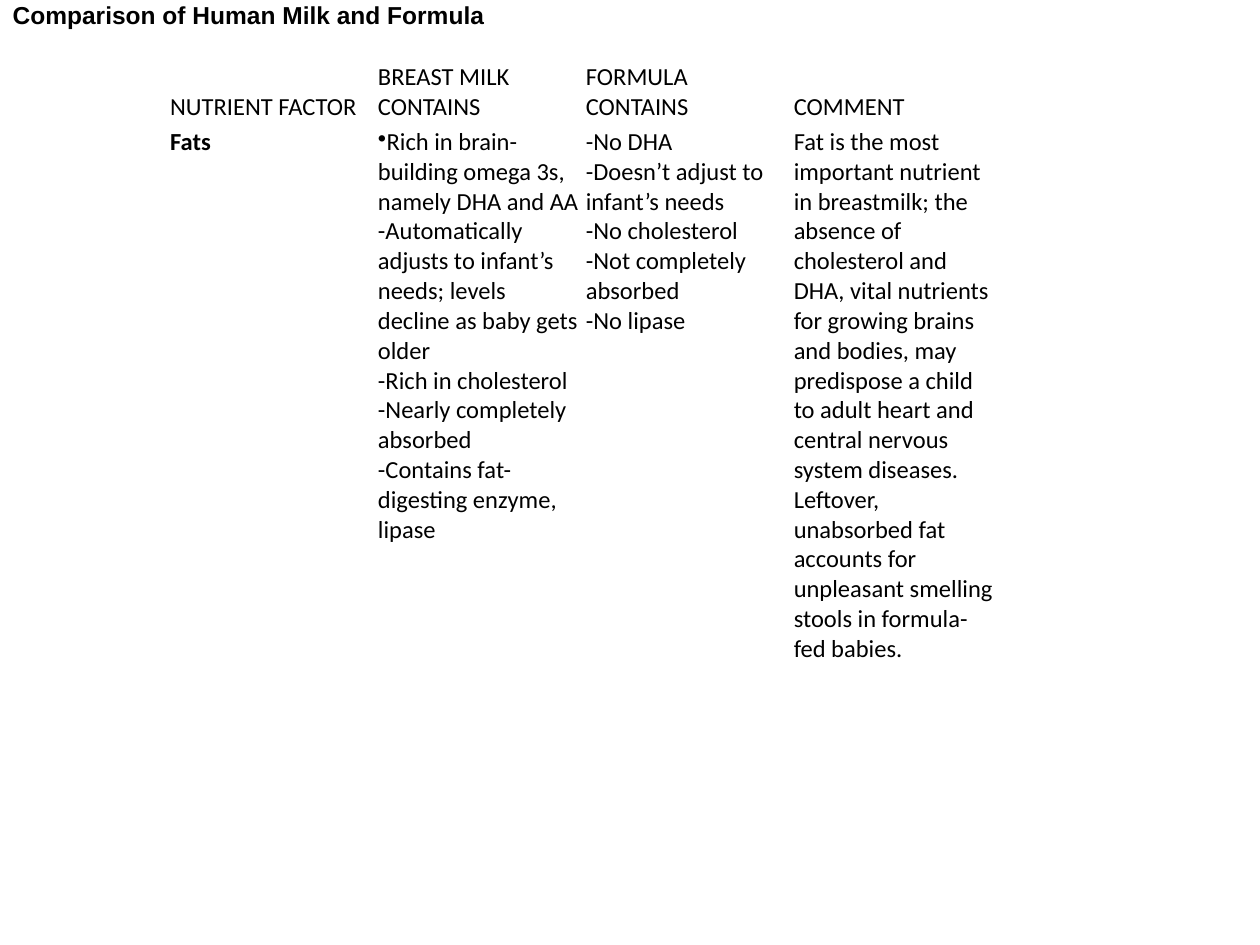
from lxml.etree import SubElement
from pptx import Presentation
from pptx.dml.color import RGBColor
from pptx.enum.text import MSO_ANCHOR, MSO_AUTO_SIZE, PP_ALIGN
from pptx.oxml.ns import qn
from pptx.util import Inches, Pt

BLACK = "000000"
HEADINGS = ["NUTRIENT FACTOR", "BREAST MILK CONTAINS", "FORMULA CONTAINS", "COMMENT"]
FATS = [
    "Fats",
    "Rich in brain-building omega 3s, namely DHA and AA\n"
    "-Automatically adjusts to infant’s needs; levels decline as baby gets older\n"
    "-Rich in cholesterol\n"
    "-Nearly completely absorbed\n"
    "-Contains fat-digesting enzyme, lipase",
    "-No DHA\n"
    "-Doesn’t adjust to infant’s needs\n"
    "-No cholesterol\n"
    "-Not completely absorbed\n"
    "-No lipase",
    "Fat is the most important nutrient in breastmilk; the absence of cholesterol "
    "and DHA, vital nutrients for growing brains and bodies, may predispose a child "
    "to adult heart and central nervous system diseases. Leftover, unabsorbed fat "
    "accounts for unpleasant smelling stools in formula-fed babies.",
]


def color(hex_value):
    return RGBColor.from_string(hex_value)


def write(paragraph, text, font_name, bold=False):
    paragraph.text = text
    paragraph.alignment = PP_ALIGN.LEFT
    paragraph.font.name = font_name
    paragraph.font.size = Pt(14)
    paragraph.font.bold = bold
    paragraph.font.color.rgb = color(BLACK)


def add_bullet(paragraph):
    properties = paragraph._p.get_or_add_pPr()
    properties.set("marL", "0")
    properties.set("indent", "0")
    bullet = SubElement(properties, qn("a:buChar"))
    bullet.set("char", "•")
    properties.find(qn("a:defRPr")).addprevious(bullet)


def place_title(slide, text):
    title = slide.shapes.title
    title.left, title.top = Inches(0), Inches(0)
    title.width, title.height = Inches(10), Inches(0.5)
    frame = title.text_frame
    frame.auto_size = MSO_AUTO_SIZE.NONE
    frame.word_wrap = False
    frame.vertical_anchor = MSO_ANCHOR.TOP
    frame.margin_left = frame.margin_right = Inches(0.1)
    frame.margin_top = frame.margin_bottom = 0
    write(frame.paragraphs[0], text, "Arial", bold=True)


def fill_cell(cell, text, anchor, bold):
    cell.fill.background()
    cell.vertical_anchor = anchor
    cell.margin_left = cell.margin_right = Inches(0.02)
    cell.margin_top = cell.margin_bottom = Inches(0.02)
    write(cell.text_frame.paragraphs[0], text, "Calibri", bold)


def add_comparison(slide):
    rows = [(HEADINGS, 0.57, MSO_ANCHOR.BOTTOM), (FATS, 6.01, MSO_ANCHOR.TOP)]
    comparison = slide.shapes.add_table(
        len(rows), len(HEADINGS), Inches(1.33), Inches(0.42), Inches(6.58), Inches(6.58)
    ).table
    comparison.first_row = False
    comparison.horz_banding = False
    for column in comparison.columns:
        column.width = Inches(1.65)
    for row, (texts, height, anchor) in zip(comparison.rows, rows):
        row.height = Inches(height)
        for cell, text in zip(row.cells, texts):
            fill_cell(cell, text, anchor, bold=text == "Fats")
    add_bullet(comparison.cell(1, 1).text_frame.paragraphs[0])


def main():
    presentation = Presentation()
    presentation.slide_width = Inches(10)
    presentation.slide_height = Inches(7.5)
    slide = presentation.slides.add_slide(presentation.slide_layouts[5])
    add_comparison(slide)
    place_title(slide, "Comparison of Human Milk and Formula")
    presentation.save("out.pptx")


if __name__ == "__main__":
    main()
